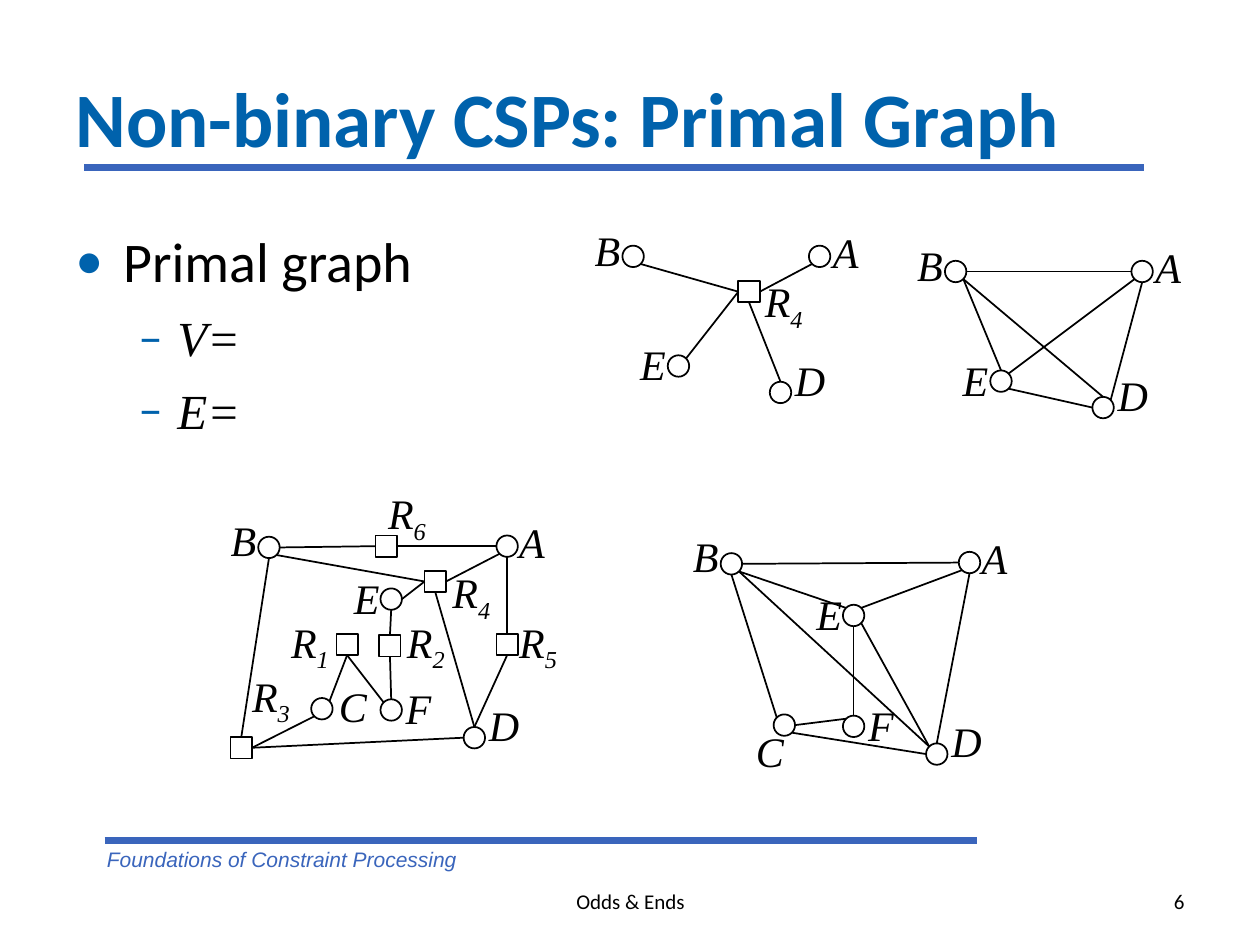
from lxml import etree
from pptx import Presentation
from pptx.dml.color import RGBColor
from pptx.enum.shapes import MSO_CONNECTOR, MSO_SHAPE
from pptx.enum.text import MSO_ANCHOR, MSO_AUTO_SIZE, PP_ALIGN
from pptx.oxml.ns import qn
from pptx.util import Inches, Pt

LINE = MSO_CONNECTOR.STRAIGHT
OVAL, RECT = MSO_SHAPE.OVAL, MSO_SHAPE.RECTANGLE
LEFT, MID, RIGHT = PP_ALIGN.LEFT, PP_ALIGN.CENTER, PP_ALIGN.RIGHT
TOP, CENTER = MSO_ANCHOR.TOP, MSO_ANCHOR.MIDDLE
GROW = MSO_AUTO_SIZE.SHAPE_TO_FIT_TEXT

BLACK, WHITE, BLUE, RULE = "000000", "FFFFFF", "0062AC", "3A65BC"
SIZE = 0.17  # width and height of every node

# Formats
HEAD = dict(name="Calibri", size=Pt(44), bold=True, color=BLUE)
FOOT = dict(name="Calibri", size=Pt(12), color=BLACK)
NOTE = dict(name="Arial", size=Pt(12), italic=True, color=RULE)
ITEM = dict(name="Calibri", size=Pt(32), color=BLACK)
SUB = dict(name="Times New Roman", size=Pt(28), italic=True, color=BLACK)
MARK = dict(name="Times New Roman", size=Pt(24), italic=True, color=BLACK)

# Text: words, box, format, alignment, anchor
TEXTS = [
    ("Non-binary CSPs: Primal Graph", (0.5, 0.3, 9, 1.25), HEAD, LEFT, CENTER),
    ("Foundations of Constraint Processing", (0.75, 6.67, 5.25, 0.3), NOTE, LEFT, TOP),
    ("Odds & Ends", (3.42, 6.95, 3.17, 0.4), FOOT, MID, CENTER),
    ("6", (7.17, 6.95, 2.33, 0.4), FOOT, RIGHT, CENTER),
]
# Bullets: words, sign, level, left margin, indent, space before, format
ITEMS = [
    ("Primal graph", "•", 0, 0.38, -0.38, 0, ITEM),
    ("V=", "–", 1, 0.81, -0.31, 8, SUB),
    ("E=", "–", 1, 0.81, -0.31, 8, SUB),
]
RULES = [(0.67, 9.08, 1.33), (0.83, 7.75, 6.67)]

# Layouts: node left, top, label left, top
SMALL = {
    "A": (6.42, 1.95, 6.61, 1.8), "B": (4.94, 1.95, 4.72, 1.78),
    "D": (6.11, 3.03, 6.31, 2.81), "E": (5.3, 2.82, 5.08, 2.69),
}
LARGE = {
    "A": (3.94, 4.25, 4.12, 4.1), "B": (2.05, 4.26, 1.83, 4.08),
    "C": (2.47, 5.54, 2.69, 5.4), "D": (3.68, 5.77, 3.88, 5.55),
    "E": (3.02, 4.67, 2.81, 4.54), "F": (3.02, 5.55, 3.22, 5.42),
}
SMALL_R = {"R4": (5.86, 2.23, 6.07, 2.19)}
LARGE_R = {
    "R1": (2.67, 5.03, 2.31, 4.89), "R2": (3.01, 5.04, 3.23, 4.89),
    "R3": (1.83, 5.85, 2, 5.32), "R4": (3.37, 4.53, 3.59, 4.5),
    "R5": (3.94, 5.03, 4.12, 4.89), "R6": (2.98, 4.25, 3.08, 3.87),
}
# C has its label below it in the large primal graph
LOW_C = {"C": (2.47, 5.54, 2.33, 5.63)}

# Graphs: nodes, shift, grouped, edges as node.side-node.side
GRAPHS = [
    (SMALL | SMALL_R, (0, 0), False,
     "B.se-R4.w R4.e-A.sw E.ne-R4.w D.n-R4.s"),
    (LARGE | LOW_C, (3.67, 0.13), False,
     "B.se-D.nw B.se-E.nw D.nw-E.se E.ne-A.sw D.n-A.s A.w-B.e "
     "B.s-C.nw C.e-F.nw C.se-D.w F.n-E.s"),
    (LARGE | LARGE_R, (0, 0), True,
     "C.sw-R3.e B.se-R4.w D.n-R5.s R4.e-A.sw E.e-R4.w R5.n-A.s D.n-R4.s "
     "R6.w-B.e B.s-R3.n C.ne-R1.s R1.s-F.nw R3.e-D.w A.w-R6.e R2.s-F.n R2.n-E.s"),
    (SMALL, (2.56, 0.12), False,
     "B.se-E.n E.ne-A.sw E.se-D.w D.n-B.se D.ne-A.s B.e-A.w"),
]
SITES = {"n": 0, "w": 1, "s": 2, "e": 3}


def rgb(hex):
    return RGBColor.from_string(hex)


def style(font, form):
    for key, val in form.items():
        if key == "color":
            font.color.rgb = rgb(val)
        else:
            setattr(font, key, val)


def add_box(parent, at, anchor=TOP):
    frame = parent.add_textbox(*map(Inches, at)).text_frame
    frame.word_wrap = True
    frame.vertical_anchor = anchor
    return frame


def add_line(parent, start, end, color, width):
    line = parent.add_connector(LINE, *map(Inches, start + end))
    line.line.color.rgb = rgb(color)
    line.line.width = Pt(width)
    etree.SubElement(line._element.spPr, qn("a:effectLst"))
    return line


def add_bullet(par, sign, left, indent):
    props = par._p.get_or_add_pPr()
    props.set("marL", str(Inches(left)))
    props.set("indent", str(Inches(indent)))
    tint = etree.SubElement(props, qn("a:buClr"))
    etree.SubElement(tint, qn("a:srgbClr"), val=BLUE)
    etree.SubElement(props, qn("a:buFont"), typeface="Calibri")
    etree.SubElement(props, qn("a:buChar"), char=sign)


def add_node(parent, name, x, y):
    node = parent.add_shape(RECT if name[0] == "R" else OVAL,
                            *map(Inches, (x, y, SIZE, SIZE)))
    node.shadow.inherit = False
    node.fill.solid()
    node.fill.fore_color.rgb = rgb(WHITE)
    node.line.color.rgb = rgb(BLACK)
    node.line.width = Pt(1)
    return node


def add_label(parent, name, x, y):
    frame = add_box(parent, (x, y, 0.3 if len(name) == 1 else 0.45, 0.4))
    for side in ("left", "top", "right", "bottom"):
        setattr(frame, "margin_" + side, 0)
    frame.auto_size = GROW
    for i, char in enumerate(name):
        run = frame.paragraphs[0].add_run()
        run.text = char
        style(run.font, MARK)
        if i:
            run._r.get_or_add_rPr().set("baseline", "-25000")


def find_point(x, y, side):
    """Point on a node's outline in a compass direction."""
    half = SIZE / 2
    reach = half * (0.71 if len(side) == 2 else 1)
    across = ("e" in side) - ("w" in side)
    down = ("s" in side) - ("n" in side)
    return x + half + across * reach, y + half + down * reach


def draw_graph(shapes, places, shift, grouped, edges):
    parent = shapes.add_group_shape().shapes if grouped else shapes
    dx, dy = shift
    nodes, spots = {}, {}
    for name, (x, y, left, top) in places.items():
        spots[name] = x + dx, y + dy
        nodes[name] = add_node(parent, name, *spots[name])
        add_label(parent, name, left + dx, top + dy)
    for edge in edges.split():
        ends = [end.split(".") for end in edge.split("-")]
        start, stop = [find_point(*spots[name], side) for name, side in ends]
        line = add_line(parent, start, stop, BLACK, 1)
        for (name, side), join in zip(ends, (line.begin_connect, line.end_connect)):
            if name[0] == "R":
                join(nodes[name], SITES[side])


def main():
    deck = Presentation()
    deck.slide_width, deck.slide_height = Inches(10), Inches(7.5)
    shapes = deck.slides.add_slide(deck.slide_layouts[6]).shapes

    # Rules
    for left, right, y in RULES:
        add_line(shapes, (left, y), (right, y), RULE, 4)

    # Title and footers
    for words, at, form, align, anchor in TEXTS:
        par = add_box(shapes, at, anchor).paragraphs[0]
        par.text, par.alignment = words, align
        style(par.runs[0].font, form)

    # Bullet list
    frame = add_box(shapes, (0.5, 1.75, 9, 4.95))
    for i, (words, sign, level, left, indent, gap, form) in enumerate(ITEMS):
        par = frame.add_paragraph() if i else frame.paragraphs[0]
        par.text, par.level = words, level
        add_bullet(par, sign, left, indent)
        if gap:
            par.space_before = Pt(gap)
        style(par.runs[0].font, form)

    # Constraint graphs
    for graph in GRAPHS:
        draw_graph(shapes, *graph)

    deck.save("out.pptx")


if __name__ == "__main__":
    main()
